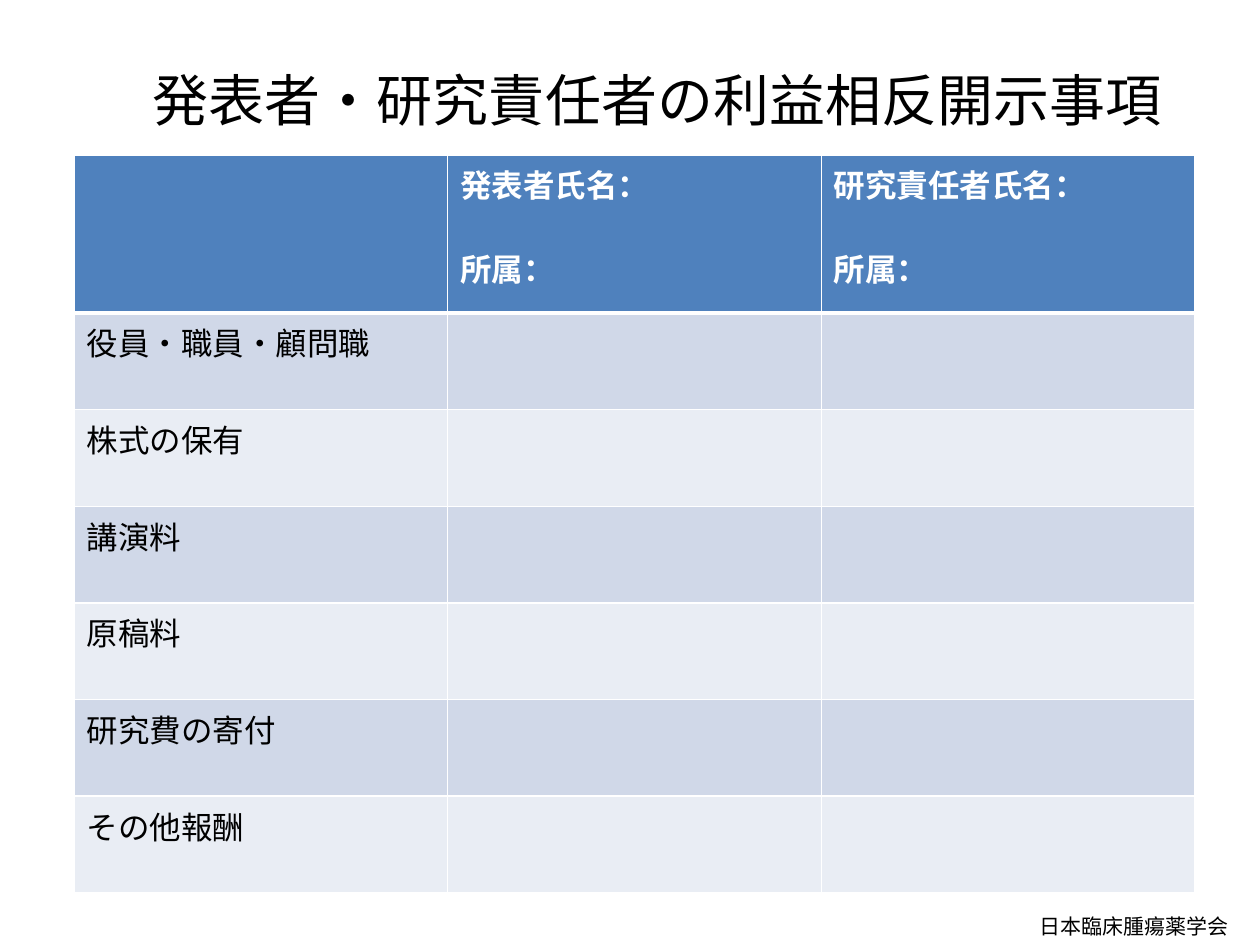
from dataclasses import dataclass

from lxml import etree
from pptx import Presentation
from pptx import util as u
from pptx.dml.color import RGBColor
from pptx.enum import text
from pptx.oxml import ns

PX_PER_INCH = 126


@dataclass(frozen=True)
class Theme:
    font: str = "Calibri"
    ink: str = "000000"
    white: str = "FFFFFF"
    header: str = "4F81BD"
    bands: tuple[str, str] = ("D0D8E8", "E9EDF4")
    title_size: int = 32
    table_size: int = 18
    footer_size: int = 12
    header_gap: int = 22
    rule: int = 1
    header_rule: int = 3


@dataclass(frozen=True)
class Box:
    left: int
    top: int
    width: int
    height: int


@dataclass(frozen=True)
class Row:
    cells: tuple[str, ...]
    fill: str
    color: str
    bold: bool
    top_rule: int
    bottom_rule: int


THEME = Theme()
TITLE_BOX = Box(55, 60, 1205, 78)
TABLE_BOX = Box(74, 155, 1121, 738)
FOOTER_BOX = Box(1009, 907, 251, 38)
HEADER_HEIGHT = 158
HEADINGS = ("", "発表者氏名：\n所属：", "研究責任者氏名：\n所属：")
ITEMS = ("役員・職員・顧問職", "株式の保有", "講演料", "原稿料", "研究費の寄付", "その他報酬")


def px(length: int) -> u.Emu:
    return u.Emu(round(length * u.Inches(1) / PX_PER_INCH))


def emu(box: Box) -> tuple[u.Emu, ...]:
    return px(box.left), px(box.top), px(box.width), px(box.height)


def style(paragraph, size: int, color: str, bold: bool = False) -> None:
    font = paragraph.font
    font.name = THEME.font
    font.size = u.Pt(size)
    font.bold = bold
    font.color.rgb = RGBColor.from_string(color)


def add_border(cell, side: str, width: int) -> None:
    properties = cell._tc.get_or_add_tcPr()
    line = etree.SubElement(properties, ns.qn(f"a:ln{side}"), w=str(u.Pt(width)))
    fill = etree.SubElement(line, ns.qn("a:solidFill"))
    etree.SubElement(fill, ns.qn("a:srgbClr"), val=THEME.white)


def fill_cell(cell, wording: str, row: Row) -> None:
    for side, width in (("L", THEME.rule), ("R", THEME.rule),
                        ("T", row.top_rule), ("B", row.bottom_rule)):
        add_border(cell, side, width)
    cell.fill.solid()
    cell.fill.fore_color.rgb = RGBColor.from_string(row.fill)
    cell.text_frame.text = wording
    for index, paragraph in enumerate(cell.text_frame.paragraphs):
        if index:
            paragraph.space_before = u.Pt(THEME.header_gap)
        style(paragraph, THEME.table_size, row.color, row.bold)


def disclosure_rows() -> list[Row]:
    rows = [Row(HEADINGS, THEME.header, THEME.white, True, THEME.rule, THEME.header_rule)]
    for index, item in enumerate(ITEMS):
        top_rule = THEME.rule if index else THEME.header_rule
        rows.append(Row((item, "", ""), THEME.bands[index % 2], THEME.ink, False,
                        top_rule, THEME.rule))
    return rows


def add_disclosure_table(slide) -> None:
    rows = disclosure_rows()
    table = slide.shapes.add_table(len(rows), len(HEADINGS), *emu(TABLE_BOX)).table
    for column in table.columns:
        column.width = px(TABLE_BOX.width) // len(HEADINGS)
    item_height = px(TABLE_BOX.height - HEADER_HEIGHT) // len(ITEMS)
    for index, row in enumerate(rows):
        table.rows[index].height = item_height if index else px(HEADER_HEIGHT)
        for cell, wording in zip(table.rows[index].cells, row.cells):
            fill_cell(cell, wording, row)


def set_line(shape, wording: str, size: int, anchor: text.MSO_ANCHOR) -> None:
    """Put one centred line of text in a shape."""
    frame = shape.text_frame
    frame.text = wording
    frame.word_wrap = True
    frame.auto_size = text.MSO_AUTO_SIZE.NONE
    frame.vertical_anchor = anchor
    paragraph = frame.paragraphs[0]
    paragraph.alignment = text.PP_ALIGN.CENTER
    style(paragraph, size, THEME.ink)


def main() -> None:
    presentation = Presentation()
    presentation.slide_width = u.Inches(10)
    presentation.slide_height = u.Inches(7.5)
    slide = presentation.slides.add_slide(presentation.slide_layouts[5])

    title = slide.shapes.title
    title.left, title.top, title.width, title.height = emu(TITLE_BOX)
    set_line(title, "発表者・研究責任者の利益相反開示事項", THEME.title_size,
             text.MSO_ANCHOR.MIDDLE)
    add_disclosure_table(slide)
    footer = slide.shapes.add_textbox(*emu(FOOTER_BOX))
    set_line(footer, "日本臨床腫瘍薬学会", THEME.footer_size, text.MSO_ANCHOR.TOP)

    presentation.save("out.pptx")


if __name__ == "__main__":
    main()
